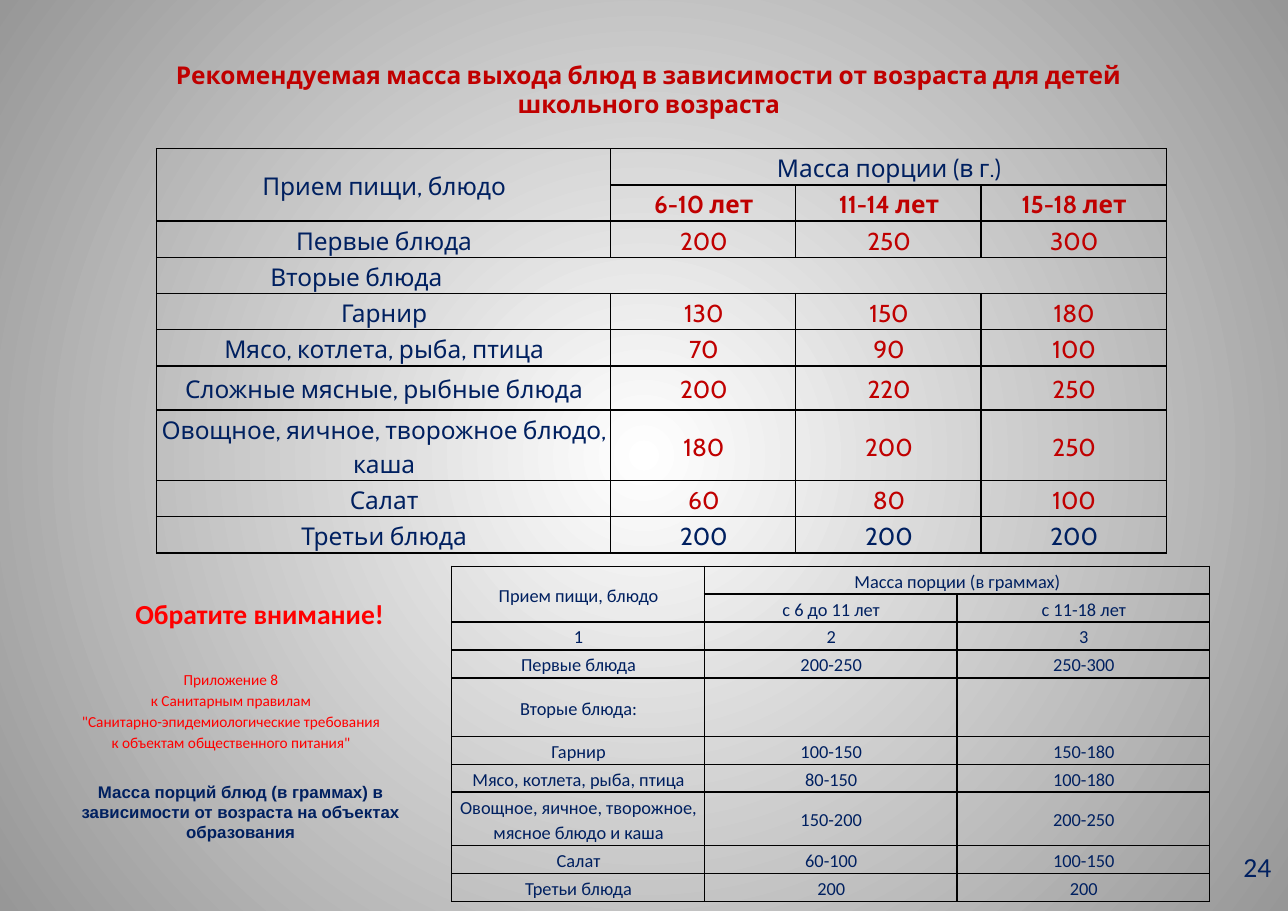
from dataclasses import dataclass

from lxml import etree
from pptx import Presentation
from pptx import util as u
from pptx.dml.color import RGBColor
from pptx.enum import text as t
from pptx.oxml import ns

NAVY = RGBColor(0x00, 0x20, 0x60)
CRIMSON = RGBColor(0xC0, 0x00, 0x00)
RED = RGBColor(0xFF, 0x00, 0x00)
BLACK = RGBColor(0x00, 0x00, 0x00)
WHITE = RGBColor(0xFF, 0xFF, 0xFF)
GREY = RGBColor(0x97, 0x97, 0x97)

WIDTH, HEIGHT = u.Inches(11.69), u.Inches(8.27)
CENTER, LEFT, RIGHT = t.PP_ALIGN.CENTER, t.PP_ALIGN.LEFT, t.PP_ALIGN.RIGHT
MIDDLE, TOP = t.MSO_ANCHOR.MIDDLE, t.MSO_ANCHOR.TOP


@dataclass
class Area:
    """Place and size in percent of the slide."""
    left: float
    top: float
    width: float
    height: float = 0

    def box(self) -> tuple[int, int, int, int]:
        """Return the area in slide units."""
        return (across(self.left), down(self.top),
                across(self.width), down(self.height))


@dataclass
class Serving:
    """One table row: its cells, height in percent and figure format."""
    cells: list[str]
    height: float
    figures: RGBColor = NAVY
    bold: bool = False


@dataclass
class Portions:
    """A table of portion weights."""
    area: Area
    columns: list[float]
    rows: list[Serving]
    merges: list[tuple[int, int, int, int]]
    font: str
    size: int


def across(percent: float) -> int:
    """Turn a percentage of the slide width into a length."""
    return round(WIDTH * percent / 100)


def down(percent: float) -> int:
    """Turn a percentage of the slide height into a length."""
    return round(HEIGHT * percent / 100)


def write(frame, content: str, *, size: int, font: str = "Calibri",
          color: RGBColor = NAVY, bold: bool = False, align=CENTER,
          anchor=TOP, spacing: float = 1, after: float = 0,
          indent: float = 0, wrap: bool = True) -> None:
    """Fill a text frame, one paragraph for each line."""
    frame.word_wrap = wrap
    frame.auto_size = t.MSO_AUTO_SIZE.NONE
    frame.vertical_anchor = anchor
    frame.text = content
    for paragraph in frame.paragraphs:
        properties = paragraph._p.get_or_add_pPr()
        properties.set("marL", str(across(indent)))
        properties.set("indent", "0")
        etree.SubElement(properties, ns.qn("a:buNone"))
        paragraph.alignment = align
        paragraph.line_spacing = spacing
        paragraph.space_before = u.Pt(0)
        paragraph.space_after = u.Pt(after)
        for run in paragraph.runs:
            run.font.name, run.font.size = font, u.Pt(size)
            run.font.bold, run.font.color.rgb = bold, color


def outline(cell) -> None:
    """Give a cell thin black borders and no fill."""
    properties = cell._tc.get_or_add_tcPr()
    for side in ("lnL", "lnR", "lnT", "lnB"):
        line = etree.SubElement(properties, ns.qn(f"a:{side}"), w=str(u.Pt(1)))
        solid = etree.SubElement(line, ns.qn("a:solidFill"))
        etree.SubElement(solid, ns.qn("a:srgbClr"), val=str(BLACK))
    cell.fill.background()


def draw_portions(slide, portions: Portions) -> None:
    """Draw a table of portion weights."""
    rows, columns = portions.rows, portions.columns
    area = portions.area
    area.height = sum(row.height for row in rows)
    table = slide.shapes.add_table(len(rows), len(columns), *area.box()).table
    table.first_row = table.horz_banding = False
    for column, weight in zip(table.columns, columns):
        column.width = across(area.width * weight / sum(columns))
    for r, row in enumerate(rows):
        table.rows[r].height = down(row.height)
        for c in range(len(columns)):
            cell = table.cell(r, c)
            outline(cell)
            cell.margin_left = cell.margin_right = u.Inches(0.01)
            cell.margin_top = cell.margin_bottom = u.Inches(0.01)
            cell.vertical_anchor = MIDDLE
            content = row.cells[c] if c < len(row.cells) else ""
            heading = len(row.cells) == 1
            write_cell(cell, content, portions, heading,
                       row.figures if c else NAVY, row.bold)
    for top, left, bottom, right in portions.merges:
        table.cell(top, left).merge(table.cell(bottom, right))


def write_cell(cell, content: str, portions: Portions, heading: bool,
               color: RGBColor, bold: bool) -> None:
    """Write a table cell; a full-width heading is indented."""
    frame = cell.text_frame
    write(frame, content, size=portions.size, font=portions.font, color=color,
          bold=bold, align=LEFT if heading else CENTER, spacing=1.15, after=1,
          indent=8.75 if heading else 0.09, anchor=MIDDLE)


def paint_background(slide) -> None:
    """Paint a round gradient from the centre of the slide."""
    fill = slide.background.fill
    fill.gradient()
    for stop, color in zip(fill.gradient_stops, (WHITE, GREY)):
        stop.color.rgb = color
    gradient = slide.element.find(".//" + ns.qn("a:gradFill"))
    gradient.remove(gradient.find(ns.qn("a:lin")))
    circle = etree.SubElement(gradient, ns.qn("a:path"), {"path": "circle"})
    etree.SubElement(circle, ns.qn("a:fillToRect"),
                     dict.fromkeys("ltrb", "50000"))


def place(shape, area: Area) -> None:
    """Move a placeholder to an area."""
    shape.left, shape.top, shape.width, shape.height = area.box()


LOW, LINE = 3.87, 3.02

SCHOOL = Portions(Area(12.15, 16.32, 78.4), [4.12, 1.68, 1.68, 1.68], [
    Serving(["Прием пищи, блюдо", "Масса порции (в г.)", "", ""], LOW),
    Serving(["", "6-10 лет", "11-14 лет", "15-18 лет"], LOW, CRIMSON, True),
    Serving(["Первые блюда", "200", "250", "300"], LOW, CRIMSON),
    Serving(["Вторые блюда"], LOW),
    Serving(["Гарнир", "130", "150", "180"], LOW, CRIMSON),
    Serving(["Мясо, котлета, рыба, птица", "70", "90", "100"], LOW, CRIMSON),
    Serving(["Сложные мясные, рыбные блюда", "200", "220", "250"], 4.84, CRIMSON),
    Serving(["Овощное, яичное, творожное блюдо, каша", "180", "200", "250"],
            7.74, CRIMSON),
    Serving(["Салат", "60", "80", "100"], LOW, CRIMSON),
    Serving(["Третьи блюда", "200", "200", "200"], LOW),
], [(0, 0, 1, 0), (0, 1, 0, 3), (3, 0, 3, 3)], "Cabin", 16)

SANITARY = Portions(Area(35.07, 62.15, 58.85), [1, 1, 1], [
    Serving(["Прием пищи, блюдо", "Масса порции (в граммах)", ""], LINE),
    Serving(["", "с 6 до 11 лет", "с 11-18 лет"], LINE),
    Serving(["1", "2", "3"], LINE),
    Serving(["Первые блюда", "200-250", "250-300"], LINE),
    Serving(["Вторые блюда:", "", ""], 6.41),
    Serving(["Гарнир", "100-150", "150-180"], LINE),
    Serving(["Мясо, котлета, рыба, птица", "80-150", "100-180"], LINE),
    Serving(["Овощное, яичное, творожное, мясное блюдо и каша",
             "150-200", "200-250"], 5.8),
    Serving(["Салат", "60-100", "100-150"], LINE),
    Serving(["Третьи блюда", "200", "200"], LINE),
], [(0, 0, 1, 0), (0, 1, 0, 2)], "Calibri", 12)

APPENDIX = """Приложение 8
к Санитарным правилам
"Санитарно-эпидемиологические требования
к объектам общественного питания\""""


def main() -> None:
    """Build and save the slide."""
    deck = Presentation()
    deck.slide_width, deck.slide_height = WIDTH, HEIGHT
    slide = deck.slides.add_slide(deck.slide_layouts[1])
    paint_background(slide)
    title, appendix = slide.placeholders
    place(title, Area(10.09, 5.68, 80.58, 8.22))
    write(title.text_frame, "Рекомендуемая масса выхода блюд в зависимости "
          "от возраста для детей школьного возраста", size=16, font="Cabin",
          color=CRIMSON, bold=True, anchor=MIDDLE)
    place(appendix, Area(3.68, 72.67, 28.49, 10.64))
    write(appendix.text_frame, APPENDIX, size=10, color=RED, spacing=1.15)
    for portions in (SCHOOL, SANITARY):
        draw_portions(slide, portions)

    attention = slide.shapes.add_textbox(*Area(9.67, 64.93, 21.21, 4.84).box())
    write(attention.text_frame, "Обратите внимание!", size=18, color=RED,
          bold=True, align=LEFT, wrap=False)
    caption = slide.shapes.add_textbox(*Area(2.99, 85.13, 31.39, 7.98).box())
    write(caption.text_frame, "Масса порций блюд (в граммах) в зависимости "
          "от возраста на объектах образования", size=11, font="Arial",
          bold=True, anchor=MIDDLE)
    number = slide.shapes.add_textbox(*Area(75.71, 93.35, 23.01, 3.63).box())
    frame = number.text_frame
    frame.margin_left = frame.margin_right = 0
    frame.margin_top = frame.margin_bottom = 0
    write(frame, "24", size=18, align=RIGHT)
    deck.save("out.pptx")


if __name__ == "__main__":
    main()
